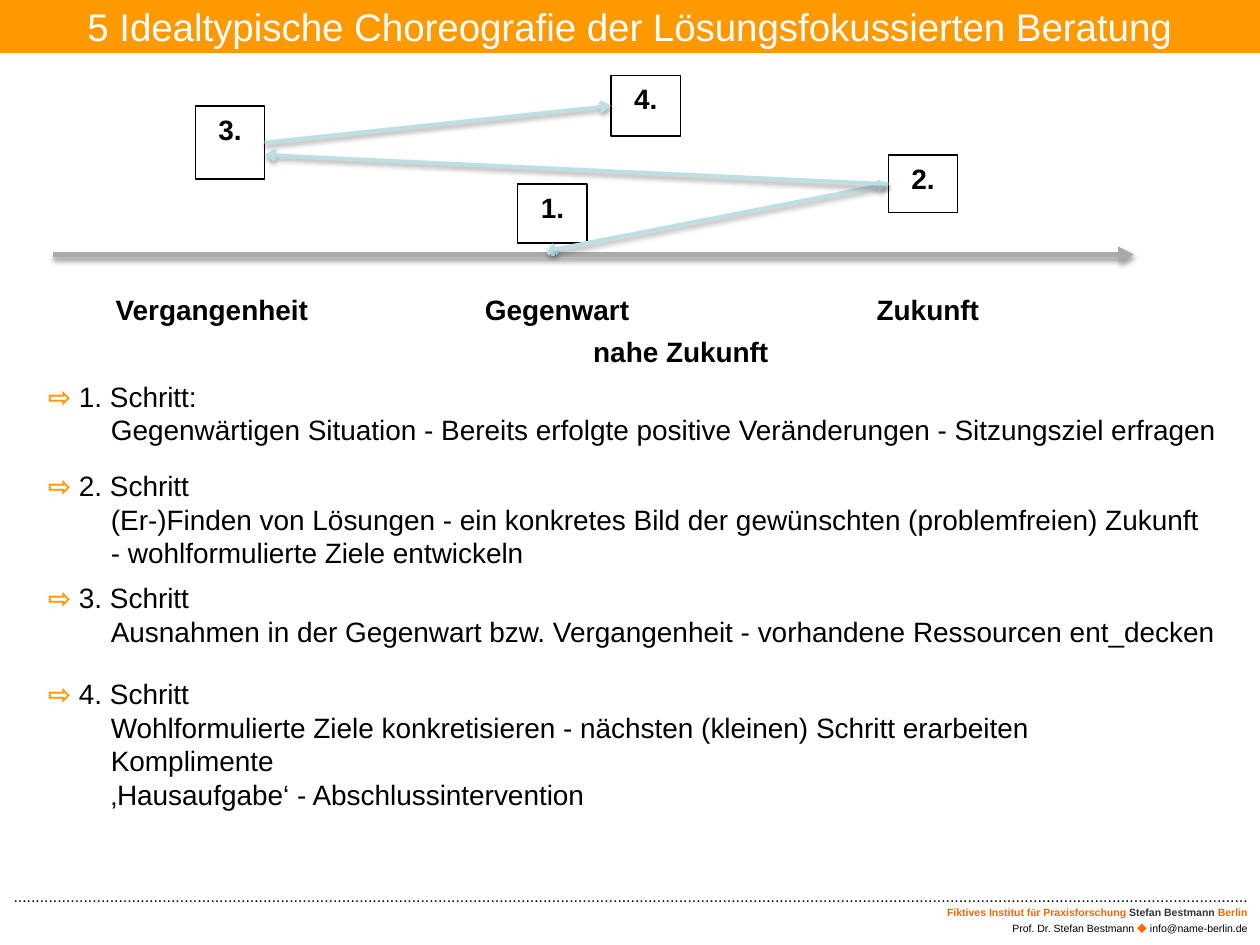
from dataclasses import dataclass
from typing import NamedTuple

from lxml.etree import SubElement
from pptx import Presentation
from pptx.dml.color import RGBColor
from pptx.enum.shapes import MSO_CONNECTOR as CONN, MSO_SHAPE as SHAPE
from pptx.enum.text import MSO_ANCHOR as ANCHOR, MSO_AUTO_SIZE as FIT, PP_ALIGN as ALIGN
from pptx.oxml.ns import qn
from pptx.util import Inches, Pt


@dataclass(frozen=True)
class Theme:
    font: str = "Arial"
    serif: str = "Times New Roman"
    orange: str = "FF9900"
    accent: str = "FF6600"
    black: str = "000000"
    dark: str = "333333"
    white: str = "FFFFFF"
    gray: str = "AAAAAA"
    arrow: str = "BBE0E3"
    title: int = 22
    body: int = 16
    dots: int = 9
    symbol: int = 8
    footer: int = 6


T = Theme()


class Part(NamedTuple):
    text: str
    size: int = T.body
    color: str = T.black
    bold: bool = False
    font: str = T.font


class Label(NamedTuple):
    text: str
    x: float
    y: float


class Station(NamedTuple):
    text: str
    x: float
    y: float
    h: float


class Step(NamedTuple):
    title: str
    y: float
    h: float
    details: tuple[str, ...]


LABELS = [
    Label("Vergangenheit", 0.82, 2.27),
    Label("Gegenwart", 3.75, 2.27),
    Label("Zukunft", 6.86, 2.27),
    Label("nahe Zukunft", 4.61, 2.61),
]
STATIONS = [
    Station("1.", 4.11, 1.46, 0.47),
    Station("2.", 7.05, 1.23, 0.46),
    Station("3.", 1.55, 0.84, 0.58),
    Station("4.", 4.85, 0.6, 0.48),
]
STEPS = [
    Step("1. Schritt:", 2.96, 0.64, (
        "Gegenwärtigen Situation - Bereits erfolgte positive Veränderungen - Sitzungsziel erfragen",)),
    Step("2. Schritt", 3.67, 0.91, (
        "(Er-)Finden von Lösungen - ein konkretes Bild der gewünschten (problemfreien) Zukunft",
        "- wohlformulierte Ziele entwickeln")),
    Step("3. Schritt", 4.56, 0.64, (
        "Ausnahmen in der Gegenwart bzw. Vergangenheit - vorhandene Ressourcen ent_decken",)),
    Step("4. Schritt", 5.32, 1.18, (
        "Wohlformulierte Ziele konkretisieren - nächsten (kleinen) Schritt erarbeiten",
        "Komplimente",
        "‚Hausaufgabe‘ - Abschlussintervention")),
]
FOOTER = [
    [Part("." * 282, T.dots)],
    [Part("Fiktives Institut f", T.footer, T.accent, True),
     Part("ü", T.footer, T.accent, True, T.serif),
     Part("r Praxisforschung ", T.footer, T.accent, True),
     Part("Stefan Bestmann", T.footer, T.dark, True),
     Part(" Berlin", T.footer, T.accent, True)],
    [Part("Prof. Dr. Stefan Bestmann ", T.footer),
     Part("⬥", T.symbol, T.accent),
     Part(" info@name-berlin.de", T.footer)],
]


def rgb(color: str) -> RGBColor:
    return RGBColor.from_string(color)


def place(s, x: float, y: float, w: float, h: float) -> None:
    s.left, s.top, s.width, s.height = map(Inches, (x, y, w, h))


def fill(s, color: str) -> None:
    s.fill.solid()
    s.fill.fore_color.rgb = rgb(color)


def write(tf, lines: list[list[Part]], align=ALIGN.LEFT) -> None:
    for i, parts in enumerate(lines):
        p = tf.add_paragraph() if i else tf.paragraphs[0]
        p.alignment = align
        p.space_before = Pt(0)
        for part in parts:
            r = p.add_run()
            r.text = part.text
            r.font.name, r.font.size, r.font.bold = part.font, Pt(part.size), part.bold
            r.font.color.rgb = rgb(part.color)


def add_title(s, text: str) -> None:
    place(s, 0, 0, 10, 0.42)
    fill(s, T.orange)
    tf = s.text_frame
    tf.word_wrap = False
    tf.auto_size = FIT.NONE
    tf.vertical_anchor = ANCHOR.MIDDLE
    write(tf, [[Part(text, T.title, T.white)]], ALIGN.CENTER)


def add_step(s, step: Step) -> None:
    place(s, 0.28, step.y, 10, step.h)
    tf = s.text_frame
    tf.auto_size = FIT.NONE
    tf.vertical_anchor = ANCHOR.TOP
    heading = [Part("⇨ ", color=T.orange, bold=True), Part(step.title)]
    write(tf, [heading] + [[Part(d)] for d in step.details])
    for i, p in enumerate(tf.paragraphs):
        pPr = p._p.get_or_add_pPr()
        pPr.set("marL", str(Inches(0.5 if i else 0)))
        pPr.set("indent", "0")
        SubElement(pPr, qn("a:buNone"))


def add_label(shapes, label: Label) -> None:
    s = shapes.add_textbox(Inches(label.x), Inches(label.y), Inches(1.83), Inches(0.67))
    fill(s, T.white)
    s.text_frame.word_wrap = True
    write(s.text_frame, [[Part(label.text, bold=True)]])


def add_station(shapes, st: Station):
    s = shapes.add_shape(SHAPE.RECTANGLE, Inches(st.x), Inches(st.y), Inches(0.55), Inches(st.h))
    s.shadow.inherit = False
    fill(s, T.white)
    s.line.color.rgb = rgb(T.black)
    s.line.width = Pt(0.75)
    s.text_frame.vertical_anchor = ANCHOR.TOP
    write(s.text_frame, [[Part(st.text, bold=True)]], ALIGN.CENTER)
    return s


def add_arrow(shapes, start: tuple[float, float], end: tuple[float, float],
              color: str = T.arrow, width: float = 2, head: str = "arrow"):
    s = shapes.add_connector(CONN.STRAIGHT, *map(Inches, start + end))
    s.line.color.rgb = rgb(color)
    s.line.width = Pt(width)
    SubElement(s.line._get_or_add_ln(), qn("a:tailEnd"), type=head)
    effects = SubElement(s._element.spPr, qn("a:effectLst"))
    shadow = SubElement(effects, qn("a:outerShdw"), blurRad=str(Pt(3.1)), dist=str(Pt(1.7)),
                        dir="5400000", rotWithShape="0")
    tint = SubElement(shadow, qn("a:srgbClr"), val=T.black)
    SubElement(tint, qn("a:alpha"), val="36000")
    return s


def main() -> None:
    prs = Presentation()
    prs.slide_width, prs.slide_height = Inches(10), Inches(7.5)
    slide = prs.slides.add_slide(prs.slide_layouts.get_by_name("Comparison"))
    shapes = slide.shapes
    title, *bodies = slide.placeholders

    add_title(title, "5 Idealtypische Choreografie der Lösungsfokussierten Beratung")
    for body, step in zip(bodies, STEPS):
        add_step(body, step)
    for label in LABELS:
        add_label(shapes, label)

    add_arrow(shapes, (0.42, 2.02), (9, 2.02), T.gray, 3, "triangle")
    first, second, third, fourth = [add_station(shapes, st) for st in STATIONS]
    add_arrow(shapes, (4.39, 2.03), (4.39, 1.93)).end_connect(first, 2)
    add_arrow(shapes, (4.39, 1.98), (7.05, 1.46)).end_connect(second, 1)
    add_arrow(shapes, (7.05, 1.46), (2.1, 1.23)).begin_connect(second, 1)
    last = add_arrow(shapes, (2.1, 1.13), (4.85, 0.84))
    last.begin_connect(third, 3)
    last.end_connect(fourth, 1)

    footer = shapes.add_textbox(Inches(0), Inches(6.99), Inches(10), Inches(0.52))
    footer.text_frame.word_wrap = True
    write(footer.text_frame, FOOTER, ALIGN.RIGHT)
    prs.save("out.pptx")


if __name__ == "__main__":
    main()
